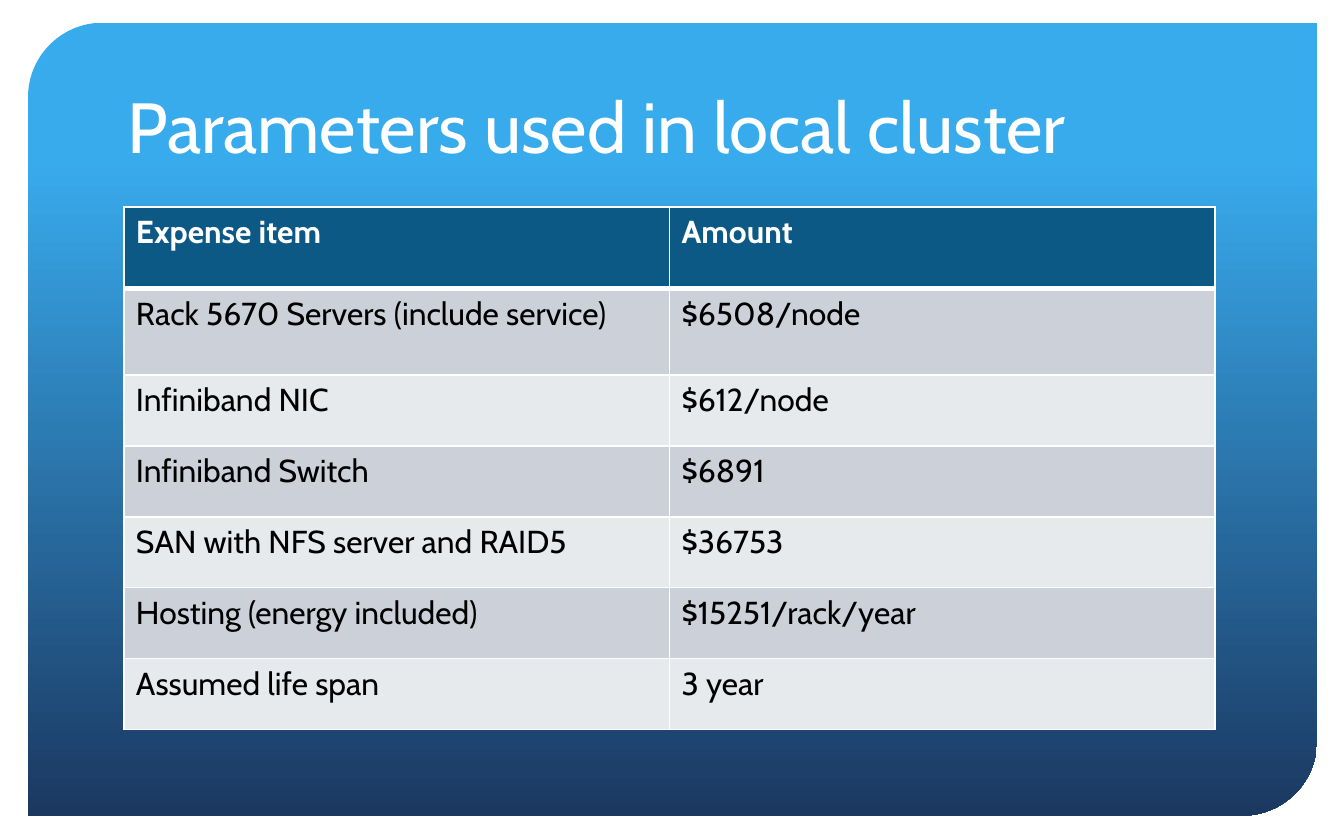
from lxml import etree
from pptx import Presentation
from pptx.dml.color import RGBColor
from pptx.enum.shapes import MSO_SHAPE
from pptx.enum.text import MSO_ANCHOR
from pptx.oxml.ns import qn
from pptx.util import Cm, Pt

PANEL = MSO_SHAPE.ROUND_2_DIAG_RECTANGLE
BOTTOM = MSO_ANCHOR.BOTTOM
FACE = "Cabin"
WHITE = "FFFFFF"
TITLE = {"name": FACE, "size": Pt(38), "bold": False}
HEAD = {"name": FACE, "size": Pt(17), "bold": True}
BODY = {"name": FACE, "size": Pt(17), "bold": False}
INSET = {"margin_left": Cm(0.23), "margin_right": Cm(0.23),
         "margin_top": Cm(0.11), "margin_bottom": Cm(0.11)}
BANDS = ["E7EAED", "CCD1D9"]
ROWS = [
    ("Expense item", "Amount"),
    ("Rack 5670 Servers (include service)", "$6508/node"),
    ("Infiniband NIC", "$612/node"),
    ("Infiniband Switch", "$6891"),
    ("SAN with NFS server and RAID5", "$36753"),
    ("Hosting (energy included)", "$15251/rack/year"),
    ("Assumed life span", "3 year"),
]
HEIGHTS = [1.55, 1.63] + [1.34] * 5


def color(code):
    return RGBColor.from_string(code)


def apply(item, values):
    for key, value in values.items():
        setattr(item, key, value)


def write(frame, text, style, code):
    para = frame.paragraphs[0]
    run = para.add_run()
    run.text = text
    apply(run.font, style)
    run.font.color.rgb = color(code)


def add_panel(slide):
    panel = slide.shapes.add_shape(PANEL, Cm(0.53), Cm(0.43), Cm(24.36), Cm(14.99))
    panel.shadow.inherit = False
    panel.adjustments[0] = 0.094
    panel.adjustments[1] = 0
    panel.line.fill.background()
    panel.fill.gradient()
    panel.fill.gradient_angle = 270
    stops = [(0.17, "38ABED"), (1, "1B3861")]
    for stop, (place, code) in zip(panel.fill.gradient_stops, stops):
        stop.position = place
        stop.color.rgb = color(code)


def add_title(slide, text):
    box = slide.shapes.add_textbox(Cm(2.16), Cm(0.89), Cm(21.06), Cm(2.41))
    apply(box.text_frame, {"word_wrap": True, "vertical_anchor": BOTTOM})
    write(box.text_frame, text, TITLE, WHITE)


def add_edge(cell, side, width):
    props = cell._tc.get_or_add_tcPr()
    line = etree.SubElement(props, qn("a:ln" + side), w=str(Pt(width)))
    fill = etree.SubElement(line, qn("a:solidFill"))
    etree.SubElement(fill, qn("a:srgbClr"), val=WHITE)


def fill_cell(cell, text, row):
    head = row == 0
    apply(cell, INSET)
    widths = {"L": 1, "R": 1, "T": 3 if row == 1 else 1, "B": 3 if head else 1}
    for side, width in widths.items():
        add_edge(cell, side, width)
    cell.fill.solid()
    cell.fill.fore_color.rgb = color("0C5986" if head else BANDS[row % 2])
    write(cell.text_frame, text, HEAD if head else BODY, WHITE if head else "000000")


def add_grid(slide):
    frame = slide.shapes.add_table(
        len(ROWS), 2, Cm(2.34), Cm(3.91), Cm(20.62), Cm(sum(HEIGHTS)))
    table = frame.table
    for col in table.columns:
        col.width = Cm(10.31)
    for row, (texts, height) in enumerate(zip(ROWS, HEIGHTS)):
        table.rows[row].height = Cm(height)
        for col, text in enumerate(texts):
            fill_cell(table.cell(row, col), text, row)


def main():
    deck = Presentation()
    apply(deck, {"slide_width": Cm(25.4), "slide_height": Cm(15.88)})
    slide = deck.slides.add_slide(deck.slide_layouts[6])
    add_panel(slide)
    add_title(slide, "Parameters used in local cluster")
    add_grid(slide)
    deck.save("out.pptx")


if __name__ == "__main__":
    main()
